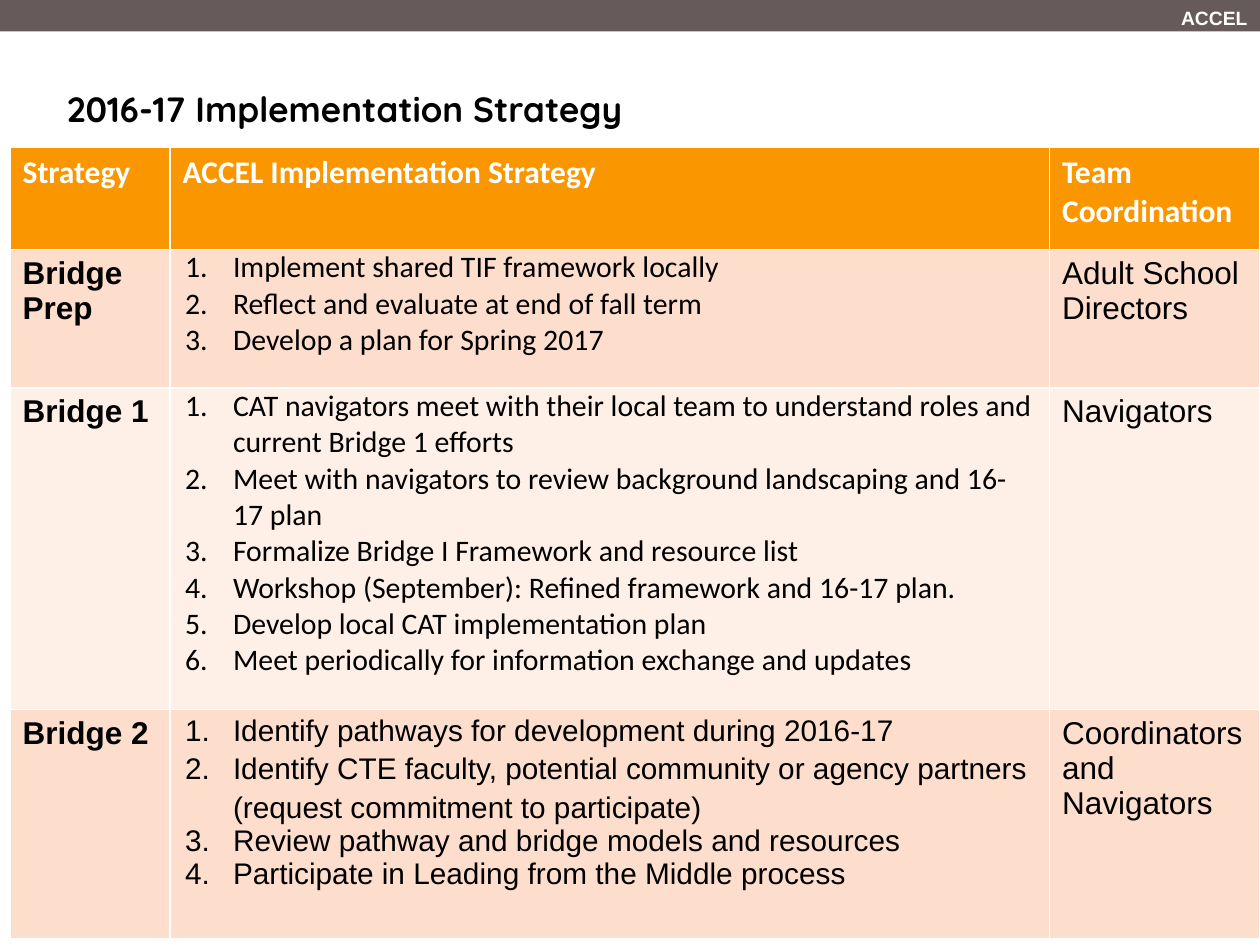
from pptx import Presentation
from pptx.dml.color import RGBColor
from pptx.enum.shapes import MSO_SHAPE
from pptx.enum.text import MSO_ANCHOR, PP_ALIGN
from pptx.oxml.ns import qn
from pptx.util import Inches, Pt
from lxml.etree import SubElement

WHITE = RGBColor(0xFF, 0xFF, 0xFF)
BLACK = RGBColor(0x00, 0x00, 0x00)
BAND_GRAY = RGBColor(0x66, 0x5A, 0x5A)
ORANGE = RGBColor(0xFA, 0x96, 0x00)
ROW_TINTS = (RGBColor(0xFD, 0xDD, 0xCC), RGBColor(0xFE, 0xEF, 0xE7))

COLUMN_WIDTHS = (1.27, 6.98, 1.67)
ROW_HEIGHTS = (0.81, 1.1, 2.55, 1.82)
HEADINGS = ("Strategy", "ACCEL Implementation Strategy", "Team Coordination")
STRATEGIES = (
    ("Bridge Prep", "Calibri", 0, (
        "Implement shared TIF framework locally",
        "Reflect and evaluate at end of fall term",
        "Develop a plan for Spring 2017",
    ), "Adult School Directors"),
    ("Bridge 1", "Calibri", 0, (
        "CAT navigators meet with their local team to understand roles and current Bridge 1 efforts",
        "Meet with navigators to review background landscaping and 16-17 plan",
        "Formalize Bridge I Framework and resource list",
        "Workshop (September): Refined framework and 16-17 plan.",
        "Develop local CAT implementation plan",
        "Meet periodically for information exchange and updates",
    ), "Navigators"),
    ("Bridge 2", "Arial", 2, (
        "Identify pathways for development during 2016-17",
        "Identify CTE faculty, potential community or agency partners (request commitment to participate)",
        "Review pathway and bridge models and resources",
        "Participate in Leading from the Middle process",
    ), "Coordinators and Navigators"),
)


def add_run(paragraph, text, size, font_name, color=BLACK, bold=False):
    run = paragraph.add_run()
    run.text = text
    run.font.size = Pt(size)
    run.font.name = font_name
    run.font.color.rgb = color
    run.font.bold = bold


def place(shape, left, top, width, height):
    shape.left, shape.top = Inches(left), Inches(top)
    shape.width, shape.height = Inches(width), Inches(height)


def add_band(slide, slide_width):
    band = slide.shapes.add_shape(MSO_SHAPE.RECTANGLE, 0, 0, slide_width, Inches(0.25))
    band.shadow.inherit = False
    band.fill.solid()
    band.fill.fore_color.rgb = BAND_GRAY
    band.line.fill.background()

    label = slide.shapes.add_textbox(Inches(9.26), 0, Inches(0.74), Inches(0.29))
    label.text_frame.word_wrap = False
    label.text_frame.vertical_anchor = MSO_ANCHOR.MIDDLE
    paragraph = label.text_frame.paragraphs[0]
    paragraph.alignment = PP_ALIGN.RIGHT
    add_run(paragraph, "ACCEL", 11, "Arial", WHITE, True)


def format_title(slide):
    title = slide.shapes.title
    place(title, 0.43, 0.5, 9.14, 0.72)
    frame = title.text_frame
    frame.vertical_anchor = MSO_ANCHOR.MIDDLE
    frame.margin_top = frame.margin_bottom = 0
    paragraph = frame.paragraphs[0]
    paragraph.alignment = PP_ALIGN.LEFT
    add_run(paragraph, "2016-17 Implementation Strategy", 20, "Quicksand", BLACK, True)


def fill_cell(cell, color):
    cell.fill.solid()
    cell.fill.fore_color.rgb = color


def write_cell(cell, text, font_name, color=BLACK, bold=False):
    add_run(cell.text_frame.paragraphs[0], text, 18, font_name, color, bold)


def number_paragraph(paragraph):
    properties = paragraph._p.get_or_add_pPr()
    properties.set("marL", str(Inches(0.38)))
    properties.set("indent", str(-Inches(0.38)))
    SubElement(properties, qn("a:buFont"), typeface="+mj-lt")
    SubElement(properties, qn("a:buAutoNum"), type="arabicPeriod")


def write_steps(cell, steps, font_name, loose_count):
    cell.margin_left = cell.margin_right = Inches(0.12)
    cell.margin_top = cell.margin_bottom = 0
    frame = cell.text_frame
    for index, step in enumerate(steps):
        paragraph = frame.add_paragraph() if index else frame.paragraphs[0]
        number_paragraph(paragraph)
        if index < loose_count:
            paragraph.line_spacing = 1.15
        add_run(paragraph, step, 17, font_name)


def add_strategy_table(slide):
    table = slide.shapes.add_table(
        len(ROW_HEIGHTS), len(COLUMN_WIDTHS), Inches(0.08), Inches(1.17),
        Inches(sum(COLUMN_WIDTHS)), Inches(sum(ROW_HEIGHTS))).table
    for column, width in zip(table.columns, COLUMN_WIDTHS):
        column.width = Inches(width)
    for row, height in zip(table.rows, ROW_HEIGHTS):
        row.height = Inches(height)

    for column, heading in enumerate(HEADINGS):
        cell = table.cell(0, column)
        fill_cell(cell, ORANGE)
        write_cell(cell, heading, "Calibri", WHITE, True)

    for row, (name, step_font, loose_count, steps, team) in enumerate(STRATEGIES, 1):
        name_cell, steps_cell, team_cell = table.rows[row].cells
        for cell in (name_cell, steps_cell, team_cell):
            fill_cell(cell, ROW_TINTS[(row - 1) % 2])
        write_cell(name_cell, name, "Arial", bold=True)
        write_steps(steps_cell, steps, step_font, loose_count)
        write_cell(team_cell, team, "Arial")


def main():
    presentation = Presentation()
    presentation.slide_width = Inches(10)
    presentation.slide_height = Inches(7.5)
    slide = presentation.slides.add_slide(presentation.slide_layouts[5])
    add_band(slide, presentation.slide_width)
    format_title(slide)
    add_strategy_table(slide)
    presentation.save("out.pptx")


if __name__ == "__main__":
    main()
